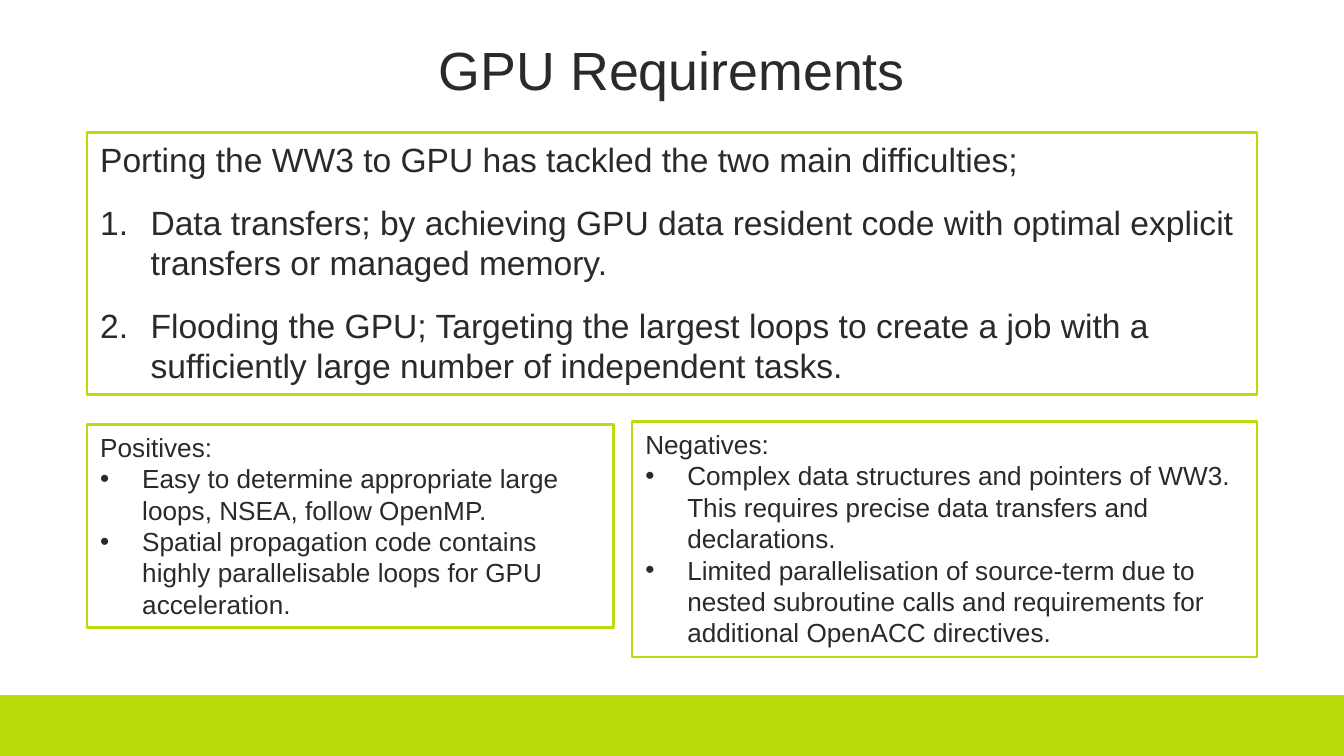
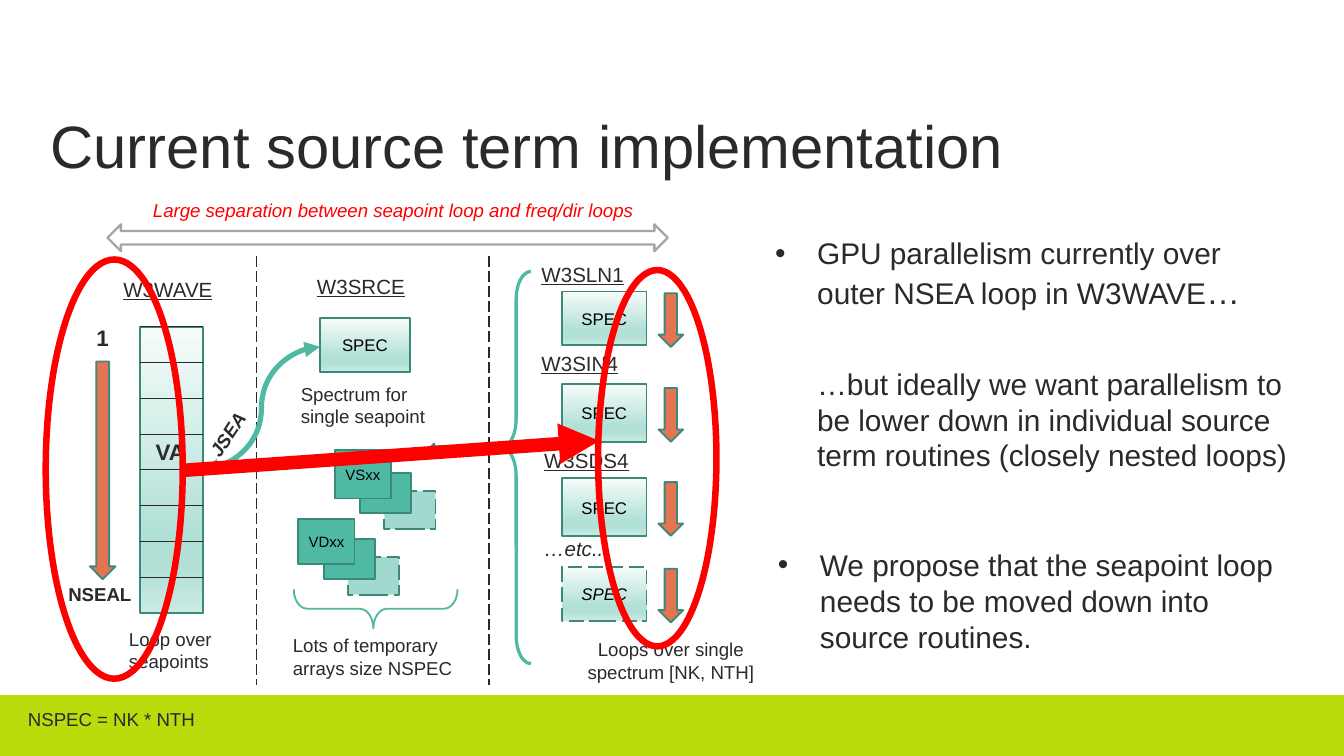
from lxml.etree import SubElement
from pptx import Presentation
from pptx.dml.color import RGBColor
from pptx.enum.dml import MSO_LINE
from pptx.enum.shapes import MSO_CONNECTOR, MSO_SHAPE
from pptx.enum.text import MSO_ANCHOR, PP_ALIGN
from pptx.oxml.ns import qn
from pptx.util import Pt

FONT = "Arial"
INK, BLACK, LIME, RED = "2A2A2A", "000000", "B9DC0C", "FF0000"
TEAL, EDGE, CORAL, GREY = "50B9A4", "3B8979", "E47452", "A6A6A6"
FADE = [(0, "F6FCFA"), (74, "B0E0D6"), (83, "B0E0D6"), (100, "CBEAE4")]
WIDE, HIGH = 720, 405
DOT, NUM = ("•", 22.5), ("1.", 27)


def color(code):
    return RGBColor.from_string(code)


def shift(box, x, y, w, h):
    """Place a part inside the given box."""
    return box[0] + x, box[1] + y, w, h


# Text
def mark(para, bullet):
    sign, indent = bullet
    props = para._p.get_or_add_pPr()
    props.set("marL", str(Pt(indent)))
    props.set("indent", str(-Pt(indent)))
    if sign == "1.":
        SubElement(props, qn("a:buAutoNum"), type="arabicPeriod")
    else:
        SubElement(props, qn("a:buFont"), typeface=FONT)
        SubElement(props, qn("a:buChar"), char=sign)


def write(shape, lines, size, code=INK, align=PP_ALIGN.LEFT, anchor=MSO_ANCHOR.TOP,
          after=0, bold=False, italic=False, under=False, wrap=True):
    """Fill a shape with lines; a line is a text or a (text, bullet) pair."""
    frame = shape.text_frame
    frame.word_wrap = wrap
    frame.vertical_anchor = anchor
    for i, line in enumerate(lines):
        text, bullet = line if isinstance(line, tuple) else (line, None)
        para = frame.paragraphs[0] if i == 0 else frame.add_paragraph()
        para.text = text
        para.alignment = align
        para.space_after = Pt(after)
        if bullet:
            mark(para, bullet)
        font = para.font
        font.name, font.size = FONT, Pt(size)
        font.bold, font.italic, font.underline = bold, italic, under
        font.color.rgb = color(code)
    return frame


def label(slide, box, text, size=10, **style):
    lines = text if isinstance(text, list) else [text]
    shape = slide.shapes.add_textbox(*map(Pt, box))
    return shape, write(shape, lines, size, **style)


# Shapes and lines
def fade(shape):
    shape.fill.gradient()
    shape.fill.gradient_angle = 270
    stops = shape._element.spPr.find(qn("a:gradFill")).find(qn("a:gsLst"))
    stops.clear()
    for place, code in FADE:
        stop = SubElement(stops, qn("a:gs"), pos=str(place * 1000))
        SubElement(stop, qn("a:srgbClr"), val=code)


def draw(slide, kind, box, fill=None, line=EDGE, width=1, dash=False, alpha=None):
    shape = slide.shapes.add_shape(kind, *map(Pt, box))
    shape.shadow.inherit = False
    if fill is FADE:
        fade(shape)
    elif fill:
        shape.fill.solid()
        shape.fill.fore_color.rgb = color(fill)
        if alpha:
            tint = shape._element.spPr.find(qn("a:solidFill"))[0]
            SubElement(tint, qn("a:alpha"), val=str(alpha * 1000))
    else:
        shape.fill.background()
    shape.line.color.rgb = color(line)
    shape.line.width = Pt(width)
    if dash:
        shape.line.dash_style = MSO_LINE.LONG_DASH
    return shape


def link(slide, start, end, code=INK, width=0.5, dash=False, head=False, tail=False,
         kind=MSO_CONNECTOR.STRAIGHT):
    line = slide.shapes.add_connector(kind, *map(Pt, start + end))
    line.line.color.rgb = color(code)
    line.line.width = Pt(width)
    if dash:
        line.line.dash_style = MSO_LINE.LONG_DASH
    props = line._element.spPr
    for tag, wanted in (("a:headEnd", head), ("a:tailEnd", tail)):
        if wanted:
            SubElement(props.find(qn("a:ln")), qn(tag), type="triangle")
    SubElement(props, qn("a:effectLst"))


# Shared slide frame
def start(deck, title, box, size, align=PP_ALIGN.LEFT):
    slide = deck.slides.add_slide(deck.slide_layouts[6])
    draw(slide, MSO_SHAPE.RECTANGLE, (0, 373, WIDE, HIGH - 373), LIME, LIME)
    _, frame = label(slide, box, title, size, align=align, anchor=MSO_ANCHOR.BOTTOM)
    frame.paragraphs[0].line_spacing = 0.9
    return slide


# Slide 1: framed text
def panel(slide, box, lead, items, bullet, size, after=0):
    shape = draw(slide, MSO_SHAPE.RECTANGLE, box, line=LIME, width=1.5)
    write(shape, [lead] + [(item, bullet) for item in items], size, after=after)


def needs(deck):
    slide = start(deck, "GPU Requirements", (223, 13, 274, 45), 28.8, PP_ALIGN.CENTER)
    panel(slide, (46.6, 71, 626.8, 140.4),
          "Porting the WW3 to GPU has tackled the two main difficulties;",
          ["Data transfers; by achieving GPU data resident code with optimal explicit "
           "transfers or managed memory.",
           "Flooding the GPU; Targeting the largest loops to create a job with a "
           "sufficiently large number of independent tasks."], NUM, 18, 12)
    panel(slide, (46.6, 227.5, 282.2, 108.7), "Positives:",
          ["Easy to determine appropriate large loops, NSEA, follow OpenMP.",
           "Spatial propagation code contains highly parallelisable loops for GPU "
           "acceleration."], DOT, 14)
    panel(slide, (338.6, 226, 334.8, 126), "Negatives:",
          ["Complex data structures and pointers of WW3. This requires precise data "
           "transfers and declarations.",
           "Limited parallelisation of source-term due to nested subroutine calls and "
           "requirements for additional OpenACC directives."], DOT, 14)


# Slide 2: parts of the diagram
def spec(slide, box, last=False):
    shape = draw(slide, MSO_SHAPE.RECTANGLE, box, FADE, dash=last)
    write(shape, ["SPEC"], 9, BLACK, PP_ALIGN.CENTER, MSO_ANCHOR.MIDDLE, italic=last)


def stack(slide, box, name):
    """Three tiles, the named one in front."""
    high = box[3]
    rect = MSO_SHAPE.RECTANGLE
    draw(slide, rect, shift(box, 26.6, high - 4, 27.4, 20.2), TEAL, dash=True, alpha=53)
    draw(slide, rect, shift(box, 13.7, high - 13.7, 27.4, 21.6), TEAL)
    front = draw(slide, rect, box, TEAL)
    frame = write(front, [name], 8, BLACK, PP_ALIGN.CENTER, MSO_ANCHOR.MIDDLE)
    frame.margin_left = frame.margin_right = Pt(2.9)


def wave(slide, box):
    # Seapoint array
    x, y, w, h = cells = shift(box, 45, 38, 33.8, 153.4)
    draw(slide, MSO_SHAPE.RECTANGLE, cells, FADE)
    for i in range(8):
        level = y + i * h / 8
        link(slide, (x + w, level), (x, level))
    # Loop direction and labels
    label(slide, shift(box, 29, 7.7, 96.5, 21), "W3WAVE", 11, under=True)
    draw(slide, MSO_SHAPE.DOWN_ARROW, shift(box, 18.2, 56.7, 13.7, 116.6), CORAL)
    link(slide, (x + w, box[1] + 114.3), (box[0] + 141.4, box[1] + 48.8), TEAL, 2.75,
         head=True, tail=True, kind=MSO_CONNECTOR.CURVE)
    tag, _ = label(slide, shift(box, 71.5, 85.5, 41.8, 19.4), "JSEA", bold=True, italic=True)
    tag.rotation = 303.4
    label(slide, shift(box, 32, 195.6, 66.2, 31.7), "Loop over seapoints")
    label(slide, shift(box, 46.3, 94.1, 33.8, 21.6), "VA", 12, bold=True)
    label(slide, shift(box, 14.6, 32.9, 33.8, 21.6), "1", 12, bold=True)
    label(slide, shift(box, -0.5, 171.9, 51.1, 19.4), "NSEAL", bold=True)


def source(slide, box):
    label(slide, shift(box, 25.2, 6.3, 96.5, 21), "W3SRCE", 11, under=True)
    spec(slide, shift(box, 33.9, 33.6, 48.2, 28.8))
    label(slide, shift(box, 16.6, 64.6, 86.4, 31), "Spectrum for single seapoint")
    # Temporary arrays
    stack(slide, shift(box, 41.8, 104.2, 30.2, 25.9), "VSxx")
    stack(slide, shift(box, 22.3, 140.9, 30.2, 24.5), "VDxx")
    draw(slide, MSO_SHAPE.LEFT_RIGHT_ARROW, shift(box, 92.2, 100.6, 28.8, 5.8), TEAL)
    brace = draw(slide, MSO_SHAPE.LEFT_BRACE, shift(box, 53.3, 145.2, 20.9, 87.8), line=TEAL)
    brace.adjustments[0], brace.adjustments[1] = 0.348, 0.486
    brace.rotation = 270
    label(slide, shift(box, 12.3, 199.2, 108.7, 31.7), "Lots of temporary arrays size NSPEC")


def terms(slide, box):
    brace = draw(slide, MSO_SHAPE.LEFT_BRACE, shift(box, 6.6, 8.4, 15.8, 210.2),
                 line=TEAL, width=1.75)
    brace.adjustments[0], brace.adjustments[1] = 0.965, 0.449
    # Name, its place, then top and height of the tile
    rows = [("W3SLN1", 21, -0.2, 19.2, 28.8), ("W3SIN4", 21, 47.3, 68.9, 31),
            ("W3SDS4", 22.4, 99.2, 119.3, 31), ("…etc..", 22.4, 146.7, 166.8, 28.8)]
    for name, x, y, top, high in rows:
        last = name == rows[-1][0]
        spec(slide, shift(box, 39, top, 45.4, high), last)
        label(slide, shift(box, x, y, 75, 21), name, 11, under=not last, italic=last)
        draw(slide, MSO_SHAPE.DOWN_ARROW,
             shift(box, 90.8, top + (high - 28.8) / 2 + 0.9, 13.2, 28.8), CORAL)
    label(slide, shift(box, 44, 201.4, 106.6, 31.7), "Loops over single\vspectrum [NK, NTH]",
          align=PP_ALIGN.CENTER)


def span(slide, box):
    draw(slide, MSO_SHAPE.LEFT_RIGHT_ARROW, shift(box, 0, 17.2, box[2], 14.4),
         line=GREY, width=1.25)
    label(slide, shift(box, 17.3, 0, 272, 19.4),
          "Large separation between seapoint loop and freq/dir loops", code=RED, italic=True)


def rings(slide, box):
    for ring in (shift(box, 0, 0, 73.4, 224.6), shift(box, 295.9, 5.7, 63.4, 201.6)):
        draw(slide, MSO_SHAPE.OVAL, ring, line=RED, width=3.5)
    x, y = box[:2]
    link(slide, (x + 73.4, y + 113), (x + 296.6, y + 97.2), RED, 7.25, tail=True)


def notes(slide, box):
    _, frame = label(slide, shift(box, 0, 0, 291.6, 48.2),
                     [("GPU parallelism currently over outer NSEA loop in W3WAVE", DOT)], 16)
    more = frame.paragraphs[0].add_run()
    more.text = "…"
    more.font.size = Pt(18)
    label(slide, shift(box, 22.4, 69.8, 269.2, 65.5),
          "…but ideally we want parallelism to be lower down in individual source term "
          "routines (closely nested loops)", 16)
    label(slide, shift(box, 1.5, 167, 290.1, 65.5),
          [("We propose that the seapoint loop needs to be moved down into source "
            "routines.", DOT)], 16)


def present(deck):
    slide = start(deck, "Current source term implementation", (20, 55.4, 680, 45.4), 32)
    top, high = 137, 230
    for x in (137.5, 262):
        link(slide, (x, top), (x, top + high), width=0.75, dash=True)
    wave(slide, (30, top, 107.5, high))
    source(slide, (137.5, top, 124.5, high))
    terms(slide, (262, top, 150, high))
    span(slide, (57.6, 103, 300.2, 32))
    rings(slide, (24.5, 139, 359.3, 225))
    notes(slide, (408.2, 122.4, 291.6, 233))
    label(slide, (7.9, 375.8, 105, 19.4), "NSPEC = NK * NTH", wrap=False)


def main():
    deck = Presentation()
    deck.slide_width, deck.slide_height = Pt(WIDE), Pt(HIGH)
    needs(deck)
    present(deck)
    deck.save("out.pptx")


if __name__ == "__main__":
    main()
